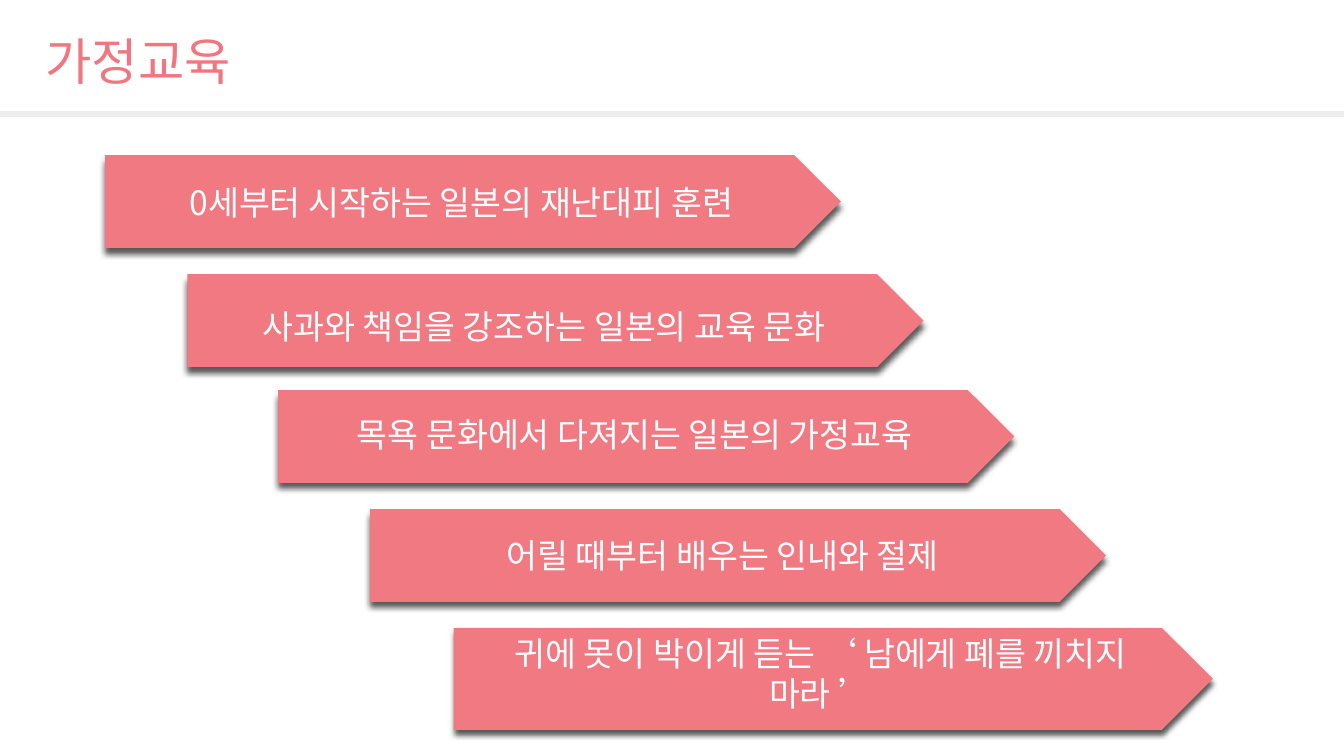
from pptx import Presentation
from pptx.dml.color import RGBColor as Rgb
from pptx.enum.shapes import MSO_CONNECTOR as Conn, MSO_SHAPE as Shape
from pptx.enum.text import MSO_ANCHOR as Anchor, PP_ALIGN as Align
from pptx.oxml import parse_xml
from pptx.oxml.ns import nsdecls
from pptx.util import Pt

PX = 9144  # EMU in one px, 100 px to the inch
WIDE, HIGH = 1333, 750
FONT = "Noto Sans CJK KR"
INK = {
    "title": "F07680",
    "arrow": "F07982",
    "text": "FFFFFF",
    "rule": "EDEDED",
    "shade": "595959",
}

# Text, left, top, width, height, and how far the text sits below the middle
STEPS = [
    ("0세부터 시작하는 일본의 재난대피 훈련", 104, 154, 730, 92, 0),
    ("사과와 책임을 강조하는 일본의 교육 문화", 186, 272, 730, 92, 5),
    ("목욕 문화에서 다져지는 일본의 가정교육", 276, 387, 730, 92, -2),
    ("어릴 때부터 배우는 인내와 절제 ", 367, 505, 730, 92, 0),
    ("귀에 못이 박이게 듣는 ‘ 남에게 폐를 끼치지 마라 ’", 450, 623, 753, 101, -6),
]


def px(*vals):
    return [val * PX for val in vals]


def write(frame, text, size=24, color="text", align=Align.CENTER, anchor=Anchor.MIDDLE):
    frame.word_wrap = True
    frame.vertical_anchor = anchor
    para = frame.paragraphs[0]
    para.alignment = align
    run = para.add_run()
    run.text = text
    run.font.size = Pt(size)
    run.font.name = FONT
    run.font.color.rgb = Rgb.from_string(INK[color])
    # Korean letters take the East Asian typeface
    run.font._element.append(parse_xml(f'<a:ea {nsdecls("a")} typeface="{FONT}"/>'))


def add_title(slide, text, left, top, width, height):
    title = slide.shapes.title
    title.left, title.top, title.width, title.height = px(left, top, width, height)
    write(title.text_frame, text, size=36, color="title", align=Align.LEFT)


def add_rule(slide, top):
    line = slide.shapes.add_connector(Conn.STRAIGHT, *px(0, top, WIDE, top))
    line.line.color.rgb = Rgb.from_string(INK["rule"])
    line.line.width = Pt(4.5)
    line._element.spPr.append(parse_xml(f'<a:effectLst {nsdecls("a")}/>'))


def add_shade(shape):
    shape._element.spPr.append(parse_xml(
        f'<a:effectLst {nsdecls("a")}>'
        f'<a:outerShdw blurRad="{Pt(4)}" dist="{Pt(4)}" dir="5400000" rotWithShape="0">'
        f'<a:srgbClr val="{INK["shade"]}"/></a:outerShdw></a:effectLst>'))


def add_step(slide, text, left, top, width, height, drop):
    arrow = slide.shapes.add_shape(Shape.PENTAGON, *px(left, top, width, height))
    arrow.fill.solid()
    arrow.fill.fore_color.rgb = Rgb.from_string(INK["arrow"])
    arrow.line.fill.background()
    add_shade(arrow)
    frame = arrow.text_frame
    # An uneven inset moves centred text by half the difference
    frame.margin_top, frame.margin_bottom = px(5 + 2 * max(drop, 0), 5 + 2 * max(-drop, 0))
    write(frame, text)


def main():
    deck = Presentation()
    deck.slide_width, deck.slide_height = px(WIDE, HIGH)
    slide = deck.slides.add_slide(deck.slide_layouts[5])

    # Heading
    add_title(slide, "가정교육", 35, 24, 585, 71)
    add_rule(slide, 113)

    # Staircase of arrows
    for step in STEPS:
        add_step(slide, *step)

    deck.save("out.pptx")


if __name__ == "__main__":
    main()
